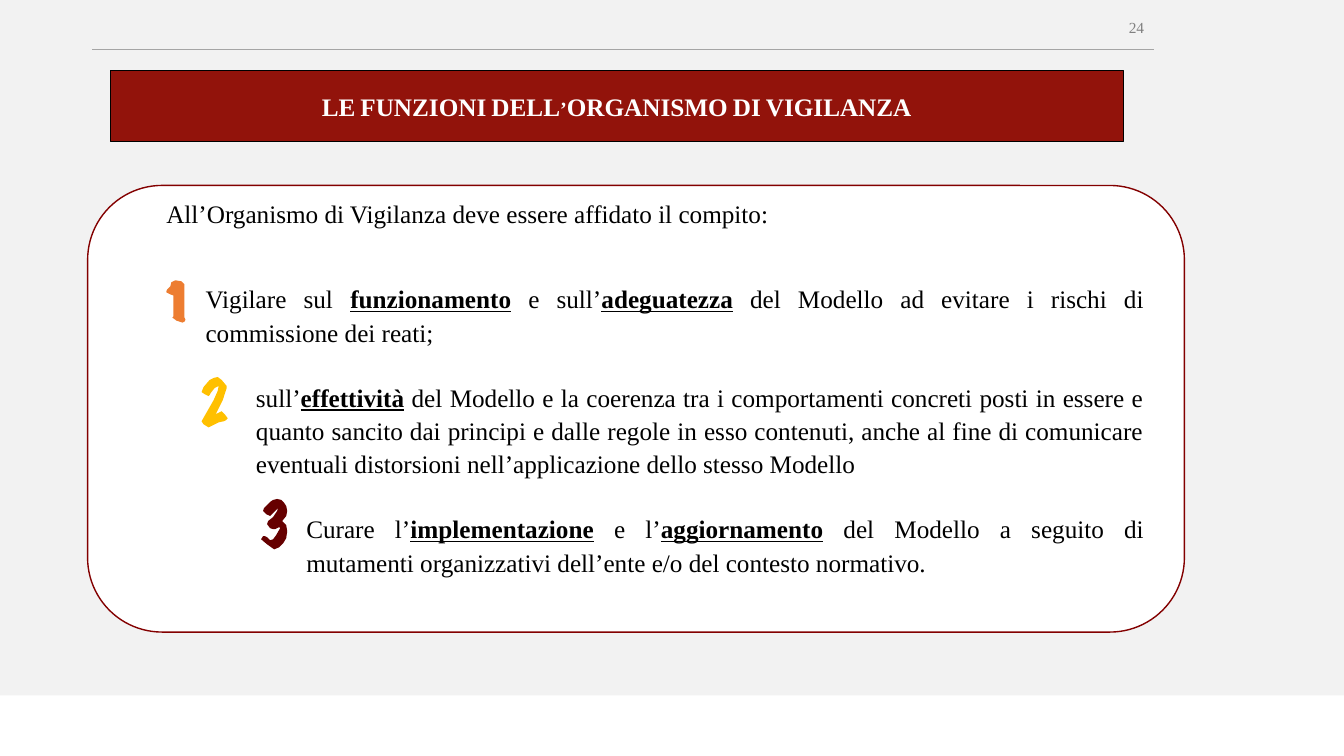
from dataclasses import dataclass

from lxml.etree import SubElement
from pptx import Presentation
from pptx.dml.color import RGBColor as RGB
from pptx.enum.shapes import MSO_CONNECTOR as LINE, MSO_SHAPE as SHAPE
from pptx.enum.text import MSO_ANCHOR as ANCHOR, MSO_AUTO_SIZE as FIT, PP_ALIGN as ALIGN
from pptx.oxml.ns import qn
from pptx.util import Pt


@dataclass(frozen=True)
class Theme:
    face: str = "Times New Roman"
    text: int = 18
    small: int = 11
    back: str = "F2F2F2"
    white: str = "FFFFFF"
    black: str = "000000"
    gray: str = "808080"
    rule: str = "A5A5A5"
    title: str = "92130B"
    edge: str = "830000"


THEME = Theme()
TITLE = "LE FUNZIONI DELL’ORGANISMO DI VIGILANZA"
# Indent, space before, text with key words between asterisks
TASKS = [
    (0, 0, "All’Organismo di Vigilanza deve essere affidato il compito:"),
    (28, 37, "Vigilare sul *funzionamento* e sull’*adeguatezza* del Modello "
     "ad evitare i rischi di commissione dei reati;"),
    (64, 22.8, "sull’*effettività* del Modello e la coerenza tra i comportamenti "
     "concreti posti in essere e quanto sancito dai principi e dalle regole in "
     "esso contenuti, anche al fine di comunicare eventuali distorsioni "
     "nell’applicazione dello stesso Modello"),
    (100, 22.8, "Curare l’*implementazione* e l’*aggiornamento* del Modello a seguito "
     "di mutamenti organizzativi dell’ente e/o del contesto normativo."),
]
# Place in the panel, colour, outline in hundredths of an inch
DIGITS = [
    (56.2, 67.7, "ED7D31", [
        (19, 39), (18, 41), (16, 42), (10, 40), (6, 37), (7, 36), (7, 15), (4, 14),
        (0, 12), (0, 11), (1, 9), (4, 6), (5, 2), (9, 0), (15, 1), (18, 4), (18, 37)]),
    (81.4, 136.8, "FFC000", [
        (26, 41), (24, 43), (22, 44), (17, 45), (9, 49), (7, 50), (2, 47), (0, 44),
        (4, 37), (12, 23), (16, 14), (17, 9), (13, 11), (9, 16), (8, 18), (7, 19),
        (3, 17), (0, 15), (2, 10), (8, 3), (12, 1), (16, 0), (20, 3), (25, 9),
        (25, 11), (21, 23), (14, 37), (18, 35), (20, 34), (23, 37)]),
    (123.9, 223.9, "660000", [
        (26, 12), (25, 17), (21, 22), (25, 26), (26, 32), (25, 39), (22, 44), (18, 48),
        (13, 50), (6, 45), (0, 40), (2, 37), (4, 37), (6, 38), (9, 41), (12, 40),
        (15, 36), (19, 29), (18, 28), (16, 29), (14, 30), (12, 30), (9, 29), (6, 25),
        (7, 22), (12, 18), (16, 12), (17, 9), (13, 13), (9, 17), (5, 15), (2, 12),
        (3, 9), (9, 3), (12, 1), (16, 0), (20, 1), (23, 4), (25, 7)]),
]


def color(name):
    return RGB.from_string(name)


def paint(shape, fill, edge=None, width=1):
    shape.shadow.inherit = False
    shape.fill.solid()
    shape.fill.fore_color.rgb = color(fill)
    if edge:
        shape.line.color.rgb = color(edge)
        shape.line.width = Pt(width)
    else:
        shape.line.fill.background()


def place(shape, box):
    shape.left, shape.top, shape.width, shape.height = map(Pt, box)


def style(par, size, tint, align):
    par.alignment = align
    par.font.name = THEME.face
    par.font.size = Pt(size)
    par.font.color.rgb = color(tint)


def set_frame(frame, anchor):
    frame.word_wrap = True
    frame.auto_size = FIT.NONE
    frame.vertical_anchor = anchor


def add_header(slide, box):
    """Draw the page number and the rule along the bottom of the box."""
    x, y, w, h = box
    page = slide.shapes.add_textbox(Pt(x + w - 216), Pt(y), Pt(216), Pt(28.8))
    set_frame(page.text_frame, ANCHOR.MIDDLE)
    par = page.text_frame.paragraphs[0]
    par.text = "24"
    style(par, THEME.small, THEME.gray, ALIGN.RIGHT)
    rule = slide.shapes.add_connector(LINE.STRAIGHT, Pt(x), Pt(y + h), Pt(x + w), Pt(y + h))
    rule.line.color.rgb = color(THEME.rule)
    rule.line.width = Pt(0.5)
    SubElement(rule.element.spPr, qn("a:effectLst"))


def add_footer(slide, box):
    paint(slide.shapes.add_shape(SHAPE.RECTANGLE, *map(Pt, box)), THEME.white)


def set_title(slide, box):
    """Turn the title placeholder into the red banner."""
    title = slide.shapes.title
    place(title, box)
    geom = SubElement(title.element.spPr, qn("a:prstGeom"), prst="round2DiagRect")
    SubElement(geom, qn("a:avLst"))
    paint(title, THEME.title, THEME.black, 0.75)
    set_frame(title.text_frame, ANCHOR.MIDDLE)
    par = title.text_frame.paragraphs[0]
    par.text = TITLE
    style(par, THEME.text, THEME.white, ALIGN.CENTER)
    par.font.bold = True
    for run in title.element.iter(qn("a:r")):
        run.get_or_add_rPr().set("cap", "small")


def fill_body(body):
    frame = body.text_frame
    set_frame(frame, ANCHOR.TOP)
    for _ in TASKS[1:]:
        frame.add_paragraph()
    nodes = body.element.iter(qn("a:p"))
    for par, node, (indent, gap, text) in zip(frame.paragraphs, nodes, TASKS):
        props = node.get_or_add_pPr()
        props.set("marL", str(Pt(indent)))
        props.set("indent", "0")
        SubElement(props, qn("a:buNone"))
        style(par, THEME.text, THEME.black, ALIGN.JUSTIFY)
        par.line_spacing = 1.1
        par.space_before = Pt(gap)
        for i, part in enumerate(text.split("*")):
            run = par.add_run()
            run.text = part
            if i % 2:
                run.font.bold = run.font.underline = True


def add_panel(slide, box):
    """Draw the white panel with the list of tasks and its digits."""
    x, y, w, h = box
    panel = slide.shapes.add_shape(SHAPE.ROUNDED_RECTANGLE, *map(Pt, box))
    paint(panel, THEME.white, THEME.edge)
    body = slide.placeholders[1]
    place(body, (x + 49, y + 3.6, w - 70.6, 278.6))
    slide.shapes.element.append(body.element)
    fill_body(body)
    for dx, dy, tint, points in DIGITS:
        pen = slide.shapes.build_freeform(*points[0], scale=Pt(0.72))
        pen.add_line_segments(points[1:], close=True)
        paint(pen.convert_to_shape(Pt(x + dx), Pt(y + dy)), tint)


def main():
    deck = Presentation()
    deck.slide_width, deck.slide_height = Pt(960), Pt(540)
    slide = deck.slides.add_slide(deck.slide_layouts[1])
    slide.background.fill.solid()
    slide.background.fill.fore_color.rgb = color(THEME.back)
    add_footer(slide, (0, 496.8, 960, 43.2))
    add_header(slide, (66, 5, 758.4, 30.3))
    set_title(slide, (78.6, 50.4, 723.8, 50.6))
    add_panel(slide, (62.6, 132.5, 783.4, 319))
    deck.save("out.pptx")


if __name__ == "__main__":
    main()
